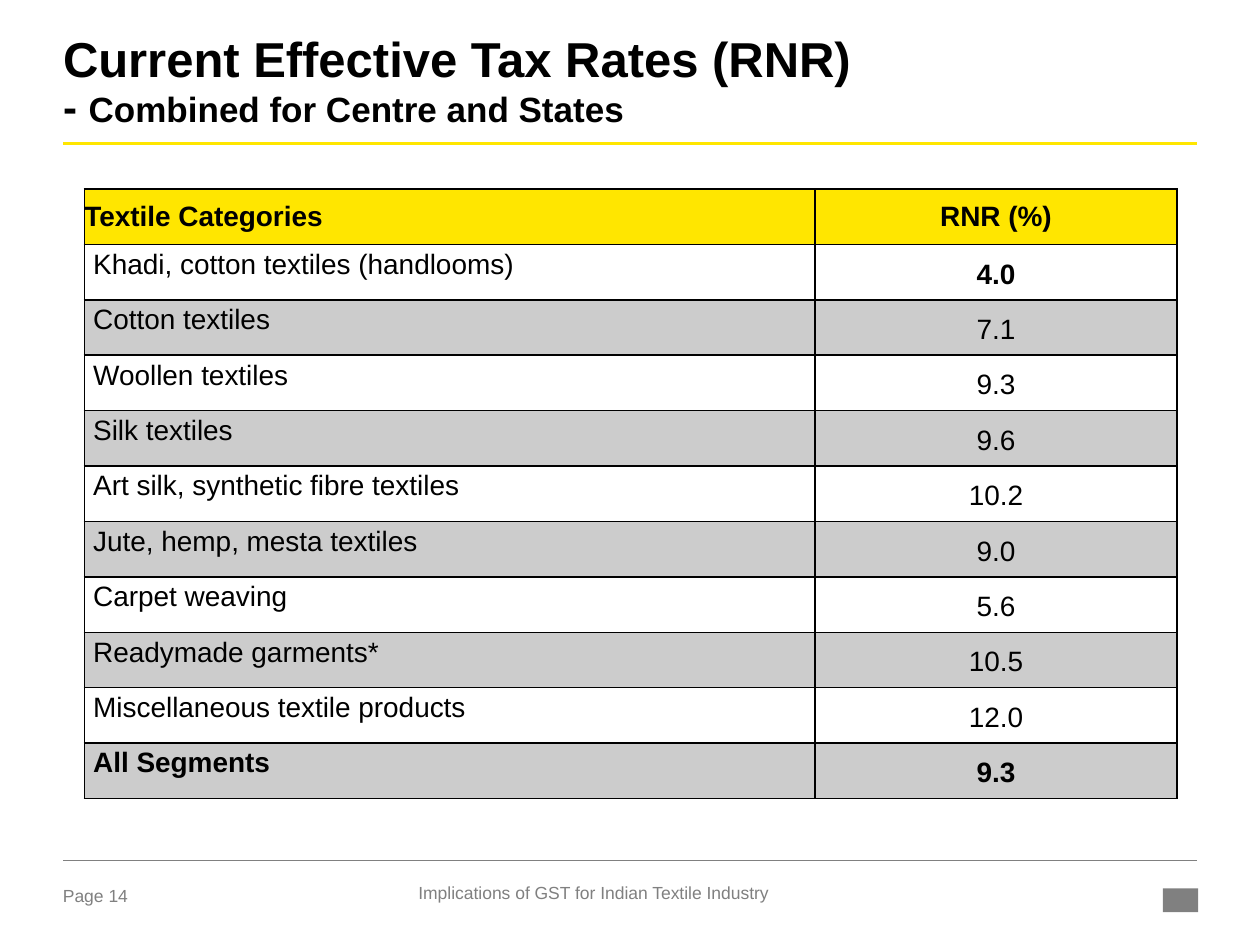
"""Build the slide on effective tax rates by textile category."""
from dataclasses import dataclass

from lxml import etree
from pptx import Presentation
from pptx.dml.color import RGBColor
from pptx.enum.shapes import MSO_CONNECTOR, MSO_SHAPE
from pptx.enum.text import MSO_ANCHOR, PP_ALIGN
from pptx.oxml.ns import qn
from pptx.util import Inches, Pt

LEFT, CENTER = PP_ALIGN.LEFT, PP_ALIGN.CENTER
TOP, MIDDLE = MSO_ANCHOR.TOP, MSO_ANCHOR.MIDDLE
STRAIGHT, RECTANGLE = MSO_CONNECTOR.STRAIGHT, MSO_SHAPE.RECTANGLE
FONT = "Arial"
BLACK, GREY, YELLOW = "000000", "808080", "FFE600"
BAND_ALPHA = 20
TABLE_LEFT, TABLE_TOP, ROW_HEIGHT = 0.67, 1.5, 0.44
COL_WIDTHS = (5.8, 2.87)


@dataclass
class Rate:
    category: str
    rnr: str
    category_bold: bool = False
    rnr_bold: bool = False


@dataclass
class Rule:
    y: float
    color: str
    weight: float


@dataclass
class Footer:
    text: str
    left: float
    top: float
    width: float
    align: PP_ALIGN


RATES = [
    Rate("Khadi, cotton textiles (handlooms)", "4.0", rnr_bold=True),
    Rate("Cotton textiles", "7.1"),
    Rate("Woollen textiles", "9.3"),
    Rate("Silk textiles", "9.6"),
    Rate("Art silk, synthetic fibre textiles", "10.2"),
    Rate("Jute, hemp, mesta textiles", "9.0"),
    Rate("Carpet weaving", "5.6"),
    Rate("Readymade garments*", "10.5"),
    Rate("Miscellaneous textile products", "12.0"),
    Rate("All Segments", "9.3", True, True),
]
RULES = [Rule(1.14, YELLOW, 1.5), Rule(6.83, GREY, 0.25)]
FOOTERS = [
    Footer("Page 14", 0.5, 7.02, 0.73, LEFT),
    Footer("Implications of GST for Indian Textile Industry", 2.83, 7, 3.76, CENTER),
]


def rgb(color: str) -> RGBColor:
    """Turn a hex string into a colour."""
    return RGBColor.from_string(color)


def add_run(p, text: str, size: float, color: str = BLACK, bold: bool = False) -> None:
    """Append a formatted run to a paragraph."""
    r = p.add_run()
    r.text = text
    r.font.name, r.font.size, r.font.bold = FONT, Pt(size), bold
    r.font.color.rgb = rgb(color)


def clear_margins(tf) -> None:
    """Remove the insets of a text frame and wrap its text."""
    tf.margin_left = tf.margin_right = tf.margin_top = tf.margin_bottom = 0
    tf.word_wrap = True


def add_title(slide) -> None:
    """Fill and place the title placeholder."""
    sp = slide.shapes.title
    sp.left, sp.top, sp.width, sp.height = Inches(0.5), Inches(0.3), Inches(9), Inches(0.85)
    tf = sp.text_frame
    clear_margins(tf)
    tf.vertical_anchor = TOP
    p = tf.paragraphs[0]
    p.alignment, p.line_spacing = LEFT, 0.85
    add_run(p, "Current Effective Tax Rates (RNR) ", 28, bold=True)
    p.add_line_break()
    add_run(p, "- ", 24, bold=True)
    add_run(p, "Combined for Centre and States", 20, bold=True)


def add_rule(slide, rule: Rule) -> None:
    """Draw a horizontal rule between the slide margins."""
    y = Inches(rule.y)
    line = slide.shapes.add_connector(STRAIGHT, Inches(0.5), y, Inches(9.5), y)
    line.line.color.rgb = rgb(rule.color)
    line.line.width = Pt(rule.weight)
    etree.SubElement(line._element.spPr, qn("a:effectLst"))


def add_footer(slide, footer: Footer) -> None:
    """Add one footer text."""
    sp = slide.shapes.add_textbox(
        Inches(footer.left), Inches(footer.top), Inches(footer.width), Inches(0.22))
    clear_margins(sp.text_frame)
    p = sp.text_frame.paragraphs[0]
    p.alignment = footer.align
    add_run(p, footer.text, 10, GREY)


def add_emblem(slide) -> None:
    """Place a plain block in the footer corner."""
    sp = slide.shapes.add_shape(
        RECTANGLE, Inches(9.23), Inches(7.05), Inches(0.28), Inches(0.19))
    sp.shadow.inherit = False
    sp.fill.solid()
    sp.fill.fore_color.rgb = rgb(GREY)
    sp.line.fill.background()


def set_borders(cell) -> None:
    """Give a cell thin black borders on all sides."""
    tcPr = cell._tc.get_or_add_tcPr()
    for side in ("lnL", "lnR", "lnT", "lnB"):
        ln = etree.SubElement(tcPr, qn(f"a:{side}"), w=str(Pt(1)))
        fill = etree.SubElement(ln, qn("a:solidFill"))
        etree.SubElement(fill, qn("a:srgbClr"), val=BLACK)


def fill_cell(cell, color: str, alpha: int = 100) -> None:
    """Fill a cell with a colour at a given opacity in percent."""
    cell.fill.solid()
    cell.fill.fore_color.rgb = rgb(color)
    if alpha < 100:
        clr = cell._tc.tcPr.find(qn("a:solidFill")).find(qn("a:srgbClr"))
        etree.SubElement(clr, qn("a:alpha"), val=str(alpha * 1000))


def write_cell(cell, text: str, bold: bool, align: PP_ALIGN, anchor: MSO_ANCHOR,
               margin: float) -> None:
    """Write bordered cell text with side margins."""
    set_borders(cell)
    cell.margin_left = cell.margin_right = Inches(margin)
    cell.margin_top = cell.margin_bottom = 0
    cell.vertical_anchor = anchor
    p = cell.text_frame.paragraphs[0]
    p.alignment = align
    add_run(p, text, 16, bold=bold)


def add_rate_table(slide) -> None:
    """Add the table of rates with a header and banded rows."""
    n_rows = len(RATES) + 1
    table = slide.shapes.add_table(
        n_rows, len(COL_WIDTHS), Inches(TABLE_LEFT), Inches(TABLE_TOP),
        Inches(sum(COL_WIDTHS)), Inches(n_rows * ROW_HEIGHT)).table
    table.first_row = table.horz_banding = False
    for col, width in zip(table.columns, COL_WIDTHS):
        col.width = Inches(width)
    for row in table.rows:
        row.height = Inches(ROW_HEIGHT)
    for j, (text, align) in enumerate((("Textile Categories", LEFT), ("RNR (%)", CENTER))):
        cell = table.cell(0, j)
        write_cell(cell, text, True, align, MIDDLE, 0)
        fill_cell(cell, YELLOW)
    for i, rate in enumerate(RATES, 1):
        category, rnr = table.cell(i, 0), table.cell(i, 1)
        write_cell(category, rate.category, rate.category_bold, LEFT, TOP, 0.07)
        write_cell(rnr, rate.rnr, rate.rnr_bold, CENTER, MIDDLE, 0.07)
        for cell in (category, rnr):
            p = cell.text_frame.paragraphs[0]
            p.line_spacing, p.space_after = 1.15, Pt(10)
            if i % 2:
                cell.fill.background()
            else:
                fill_cell(cell, BLACK, BAND_ALPHA)


def main() -> None:
    """Build and save the slide."""
    prs = Presentation()
    prs.slide_width, prs.slide_height = Inches(10), Inches(7.5)
    s = prs.slides.add_slide(prs.slide_layouts[5])
    add_emblem(s)
    for rule in RULES:
        add_rule(s, rule)
    add_title(s)
    add_rate_table(s)
    for footer in FOOTERS:
        add_footer(s, footer)
    prs.save("out.pptx")


if __name__ == "__main__":
    main()
